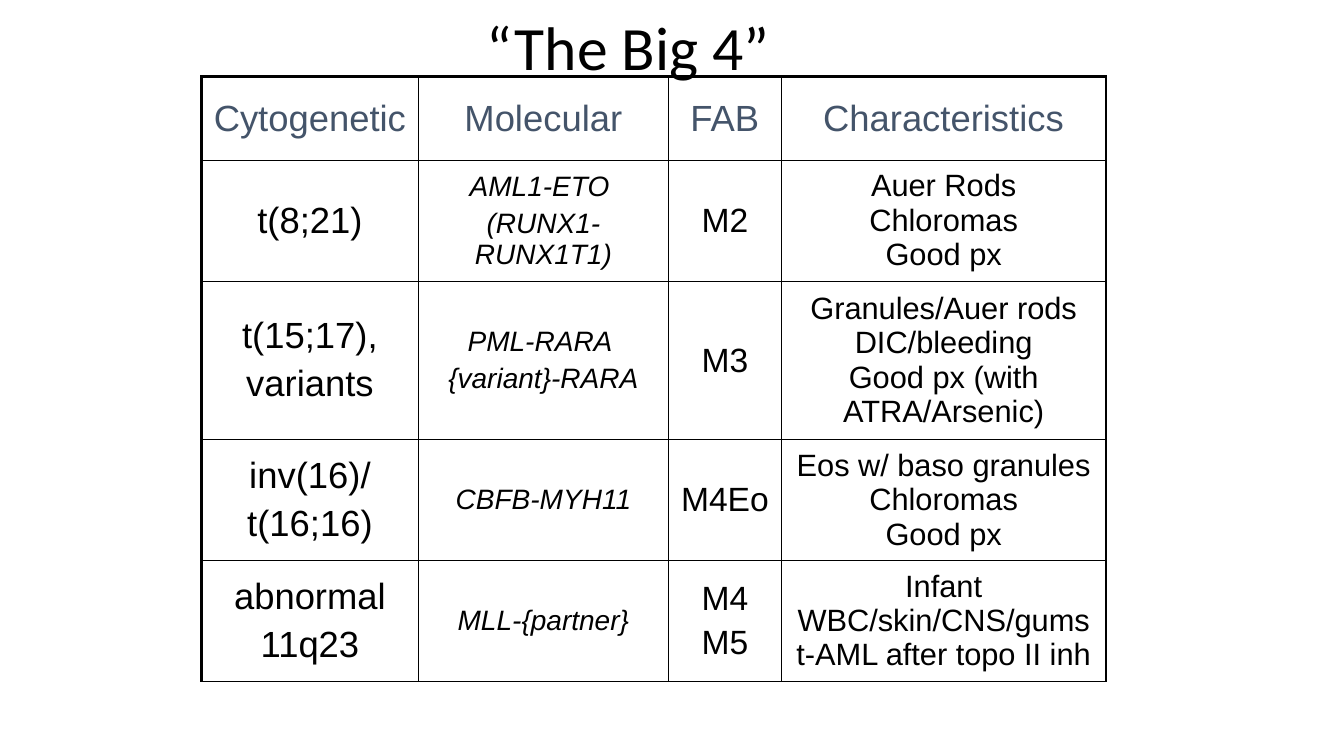
from lxml import etree
from pptx import Presentation
from pptx import util as u
from pptx.dml import color
from pptx.enum import text
from pptx.oxml import ns

PX = u.Inches(1) // 100
COLORS = {"ink": "000000", "heading": "44546A"}

COLUMN_WIDTHS = [215, 248, 112, 322]
ROW_HEIGHTS = [83, 120, 157, 120, 120]
HEADINGS = ["Cytogenetic", "Molecular", "FAB", "Characteristics"]
BIG_FOUR = [
    ["t(8;21)", "AML1-ETO \n(RUNX1-RUNX1T1)", "M2",
     "Auer Rods\nChloromas\nGood px"],
    ["t(15;17),\nvariants", "PML-RARA \n{variant}-RARA", "M3",
     "Granules/Auer rods\nDIC/bleeding\nGood px (with ATRA/Arsenic)"],
    ["inv(16)/\nt(16;16)", "CBFB-MYH11", "M4Eo",
     "Eos w/ baso granules\nChloromas\nGood px"],
    ["abnormal\n11q23", "MLL-{partner}", "M4\nM5",
     "Infant\nWBC/skin/CNS/gums\nt-AML after topo II inh"],
]
HEADING_FORMAT = {"size": 26, "ink": "heading"}
COLUMN_FORMATS = [
    {"size": 26, "gap": 0.2},
    {"size": 20, "gap": 0.2, "italic": True},
    {"size": 24, "gap": 0.2},
    {"size": 22},
]


def write(frame, content, size, font="Arial", ink="ink", italic=False, gap=0):
    """Fill a frame with centred lines; gap is space before as a share of size."""
    frame.word_wrap = True
    for index, line in enumerate(content.split("\n")):
        paragraph = frame.add_paragraph() if index else frame.paragraphs[0]
        paragraph.alignment = text.PP_ALIGN.CENTER
        paragraph.space_before = u.Pt(size * gap if index else 0)
        run = paragraph.add_run()
        run.text = line
        run.font.name = font
        run.font.size = u.Pt(size)
        run.font.bold = False
        run.font.italic = italic
        run.font.color.rgb = color.RGBColor.from_string(COLORS[ink])


class SlideBuilder:
    thin, thick = 1, 2.25

    def __init__(self, presentation):
        self.slide = presentation.slides.add_slide(presentation.slide_layouts[5])

    def title(self, content, left, top, width, height):
        shape = self.slide.shapes.title
        shape.left, shape.top = left * PX, top * PX
        shape.width, shape.height = width * PX, height * PX
        frame = shape.text_frame
        frame.auto_size = text.MSO_AUTO_SIZE.NONE
        frame.vertical_anchor = text.MSO_ANCHOR.MIDDLE
        write(frame, content, size=44, font="Calibri")

    def borders(self, cell, widths):
        properties = cell._tc.get_or_add_tcPr()
        for side, width in widths.items():
            line = etree.SubElement(properties, ns.qn(f"a:ln{side}"), w=str(u.Pt(width)))
            fill = etree.SubElement(line, ns.qn("a:solidFill"))
            etree.SubElement(fill, ns.qn("a:srgbClr"), val=COLORS["ink"])

    def table(self, left, top, column_widths, row_heights, rows):
        """Draw rows of (content, format) cells with a thick frame open at the bottom."""
        table = self.slide.shapes.add_table(
            len(row_heights), len(column_widths), left * PX, top * PX,
            sum(column_widths) * PX, sum(row_heights) * PX).table
        table.first_row = table.horz_banding = False
        for column, width in zip(table.columns, column_widths):
            column.width = width * PX
        for row, height in zip(table.rows, row_heights):
            row.height = height * PX
        last = len(column_widths) - 1
        for r, row in enumerate(rows):
            for c, (content, style) in enumerate(row):
                cell = table.cell(r, c)
                cell.vertical_anchor = text.MSO_ANCHOR.MIDDLE
                cell.margin_left = cell.margin_right = 10 * PX
                cell.margin_top = cell.margin_bottom = 5 * PX
                self.borders(cell, {
                    "L": self.thick if c == 0 else self.thin,
                    "R": self.thick if c == last else self.thin,
                    "T": self.thick if r == 0 else self.thin,
                    "B": self.thin,
                })
                cell.fill.background()
                write(cell.text_frame, content, **style)


def main():
    presentation = Presentation()
    presentation.slide_width = u.Inches(13.33)
    presentation.slide_height = u.Inches(7.5)
    builder = SlideBuilder(presentation)
    builder.title("“The Big 4”", 342, 2, 562, 88)
    rows = [[(heading, HEADING_FORMAT) for heading in HEADINGS]]
    rows += [list(zip(row, COLUMN_FORMATS)) for row in BIG_FOUR]
    builder.table(200, 76, COLUMN_WIDTHS, ROW_HEIGHTS, rows)
    presentation.save("out.pptx")


if __name__ == "__main__":
    main()
